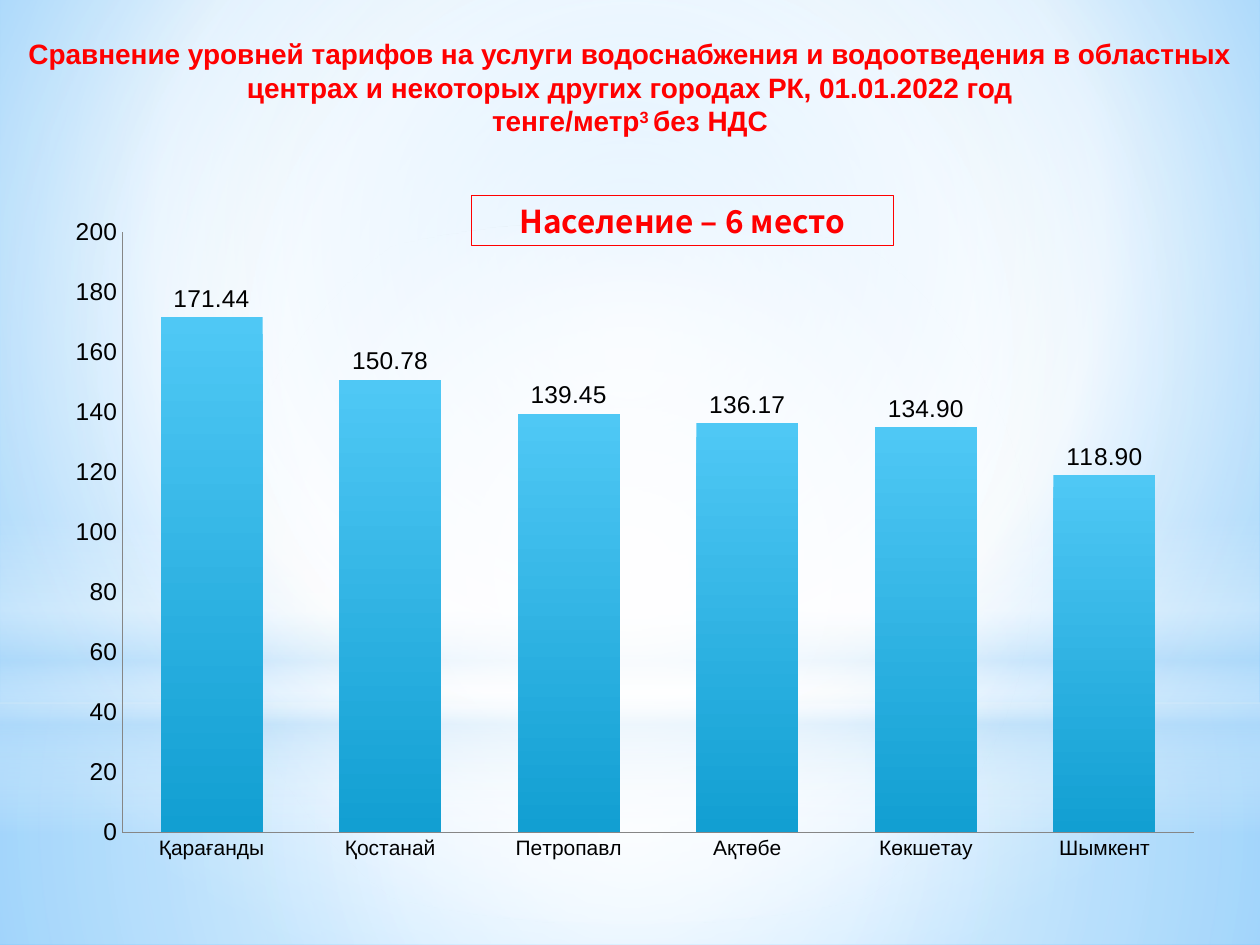
from dataclasses import dataclass
from typing import Any, NamedTuple

from pptx import Presentation, util as u
from pptx.chart import data as chart_data
from pptx.dml.color import RGBColor
from pptx.enum import chart as chart_enum, shapes, text
from pptx.oxml import parse_xml
from pptx.oxml.ns import nsdecls, qn


@dataclass(frozen=True)
class Theme:
    accent: RGBColor = RGBColor(0xFF, 0x00, 0x00)
    ink: RGBColor = RGBColor(0x00, 0x00, 0x00)
    axis: RGBColor = RGBColor(0x86, 0x86, 0x86)
    white: str = "FFFFFF"
    haze: str = "B4DCFA"
    sky: str = "9ED5FF"
    deep_sky: str = "5BB9FF"
    bar_top: str = "4FC8F5"
    bar_bottom: str = "129FD2"
    font: str = "Arial"
    badge_font: str = "Noto Sans CJK JP"
    title_size: int = 16
    badge_size: int = 18
    chart_size: int = 14
    city_size: int = 12


class Stop(NamedTuple):
    position: int
    color: str
    opacity: int = 100


class Gradient(NamedTuple):
    stops: list[Stop]
    center: tuple[int, int, int, int] | None = (50, 50, 50, 50)  # None: top to bottom


class Layer(NamedTuple):
    kind: Any
    top: float
    height: float
    gradient: Gradient


THEME = Theme()
WIDTH, HEIGHT = 10, 7.5

BACKDROP = Gradient(
    [Stop(0, THEME.sky), Stop(60, THEME.white), Stop(100, THEME.deep_sky)],
    (20, 10, 20, 60),
)
BARS = Gradient([Stop(0, THEME.bar_top), Stop(100, THEME.bar_bottom)], None)
RECTANGLE, OVAL = shapes.MSO_SHAPE.RECTANGLE, shapes.MSO_SHAPE.OVAL
LAYERS = [
    Layer(RECTANGLE, 5.58, 1.92, Gradient(
        [Stop(0, THEME.white, 91), Stop(37, THEME.white, 76), Stop(100, THEME.haze, 79)])),
    Layer(RECTANGLE, 0, 5.58, Gradient(
        [Stop(0, THEME.white, 89), Stop(48, THEME.white, 62), Stop(100, THEME.haze, 79)])),
    Layer(RECTANGLE, 4.12, 2.5, Gradient(
        [Stop(0, THEME.white, 0), Stop(29, THEME.white, 30), Stop(45, THEME.haze, 40),
         Stop(55, THEME.white, 26), Stop(65, THEME.haze, 60), Stop(100, THEME.white, 0)],
        None)),
    Layer(OVAL, 1.75, 5.58, Gradient([Stop(0, THEME.white), Stop(56, THEME.white, 0)])),
]

TARIFFS = {
    "Қарағанды": 171.44,
    "Қостанай": 150.78,
    "Петропавл": 139.45,
    "Ақтөбе": 136.17,
    "Көкшетау": 134.90,
    "Шымкент": 118.90,
}


def apply(target: Any, **values: Any) -> None:
    for name, value in values.items():
        setattr(target, name, value)


def style_font(font: Any, name: str, size: int, color: RGBColor, bold: bool = False) -> None:
    apply(font, name=name, size=u.Pt(size), bold=bold)
    font.color.rgb = color


def paint(fill: Any, owner: Any, gradient: Gradient) -> None:
    """Give the fill inside the owner element a gradient with opacity."""
    fill.gradient()
    stops = "".join(
        f'<a:gs pos="{stop.position * 1000}"><a:srgbClr val="{stop.color}">'
        f'<a:alpha val="{stop.opacity * 1000}"/></a:srgbClr></a:gs>'
        for stop in gradient.stops
    )
    if gradient.center is None:
        direction = '<a:lin ang="5400000" scaled="0"/>'
    else:
        edges = " ".join(f'{side}="{value * 1000}"'
                         for side, value in zip("ltrb", gradient.center))
        direction = f'<a:path path="circle"><a:fillToRect {edges}/></a:path>'
    old = next(owner.iter(qn("a:gradFill")))
    old.getparent().replace(old, parse_xml(
        f'<a:gradFill {nsdecls("a")} rotWithShape="1">'
        f"<a:gsLst>{stops}</a:gsLst>{direction}</a:gradFill>"))


def draw_layer(slide: Any, layer: Layer) -> None:
    shape = slide.shapes.add_shape(
        layer.kind, 0, u.Inches(layer.top), u.Inches(WIDTH), u.Inches(layer.height))
    shape.shadow.inherit = False
    shape.line.fill.background()
    paint(shape.fill, shape.element, layer.gradient)


def draw_title(slide: Any) -> None:
    title = slide.shapes.title
    apply(title, left=u.Inches(0.06), top=u.Inches(0.24),
          width=u.Inches(9.88), height=u.Inches(1.18))
    frame = title.text_frame
    apply(frame, word_wrap=True, vertical_anchor=text.MSO_ANCHOR.TOP,
          auto_size=text.MSO_AUTO_SIZE.NONE)
    lines = [
        ["Сравнение уровней тарифов на услуги водоснабжения и водоотведения в областных "
         "центрах и некоторых других городах РК, 01.01.2022 год"],
        ["тенге/метр", "3 ", "без НДС"],
    ]
    for index, parts in enumerate(lines):
        paragraph = frame.add_paragraph() if index else frame.paragraphs[0]
        apply(paragraph, alignment=text.PP_ALIGN.CENTER, space_before=u.Pt(0))
        for part in parts:
            run = paragraph.add_run()
            run.text = part
            style_font(run.font, THEME.font, THEME.title_size, THEME.accent, bold=True)
    # Raise the cubic-metre exponent
    exponent = frame.paragraphs[1].runs[1]
    exponent.font._element.set("baseline", "30000")
    # Bring the title in front of the background layers
    title.element.getparent().append(title.element)


def draw_badge(slide: Any) -> None:
    badge = slide.shapes.add_shape(
        RECTANGLE, u.Inches(3.74), u.Inches(1.55), u.Inches(3.35), u.Inches(0.4))
    badge.shadow.inherit = False
    badge.fill.background()
    badge.line.color.rgb = THEME.accent
    badge.line.width = u.Pt(0.75)
    frame = badge.text_frame
    apply(frame, word_wrap=True, vertical_anchor=text.MSO_ANCHOR.MIDDLE,
          margin_top=u.Inches(0), margin_bottom=u.Inches(0))
    paragraph = frame.paragraphs[0]
    paragraph.alignment = text.PP_ALIGN.CENTER
    run = paragraph.add_run()
    run.text = "Население – 6 место"
    style_font(run.font, THEME.badge_font, THEME.badge_size, THEME.accent, bold=True)


def draw_chart(slide: Any) -> None:
    data = chart_data.CategoryChartData()
    data.categories = list(TARIFFS)
    data.add_series("Series 1", list(TARIFFS.values()))
    chart = slide.shapes.add_chart(
        chart_enum.XL_CHART_TYPE.COLUMN_CLUSTERED, u.Inches(0.35), u.Inches(1.73),
        u.Inches(9.13), u.Inches(5.38), data).chart
    apply(chart, has_title=False, has_legend=False)
    style_font(chart.font, THEME.font, THEME.chart_size, THEME.ink)

    # Axes
    for axis in (chart.category_axis, chart.value_axis):
        apply(axis, has_major_gridlines=False,
              major_tick_mark=chart_enum.XL_TICK_MARK.NONE,
              minor_tick_mark=chart_enum.XL_TICK_MARK.NONE)
        axis.format.line.color.rgb = THEME.axis
    style_font(chart.category_axis.tick_labels.font, THEME.font, THEME.city_size, THEME.ink)
    apply(chart.value_axis, minimum_scale=0, maximum_scale=200, major_unit=20)
    apply(chart.value_axis.tick_labels, number_format="#,##0", number_format_is_linked=False)

    # Bars and their values
    plot = chart.plots[0]
    apply(plot, gap_width=75, vary_by_categories=False, has_data_labels=True)
    apply(plot.data_labels, show_value=True, number_format="0.00",
          number_format_is_linked=False,
          position=chart_enum.XL_LABEL_POSITION.OUTSIDE_END)
    style_font(plot.data_labels.font, THEME.font, THEME.chart_size, THEME.ink)
    paint(plot.series[0].format.fill, chart.element, BARS)

    # Inner plot area
    area = next(chart.element.iter(qn("c:plotArea")))
    for layout in area.findall(qn("c:layout")):
        area.remove(layout)
    box = {"x": 0.068, "y": 0.014, "w": 0.932, "h": 0.892}
    modes = '<c:xMode val="edge"/><c:yMode val="edge"/>'
    sizes = "".join(f'<c:{key} val="{value}"/>' for key, value in box.items())
    area.insert(0, parse_xml(
        f'<c:layout {nsdecls("c")}><c:manualLayout><c:layoutTarget val="inner"/>'
        f"{modes}{sizes}</c:manualLayout></c:layout>"))


def main() -> None:
    presentation = Presentation()
    apply(presentation, slide_width=u.Inches(WIDTH), slide_height=u.Inches(HEIGHT))
    slide = presentation.slides.add_slide(presentation.slide_layouts[5])
    paint(slide.background.fill, slide.element, BACKDROP)
    for layer in LAYERS:
        draw_layer(slide, layer)
    draw_title(slide)
    draw_badge(slide)
    draw_chart(slide)
    presentation.save("out.pptx")


if __name__ == "__main__":
    main()
